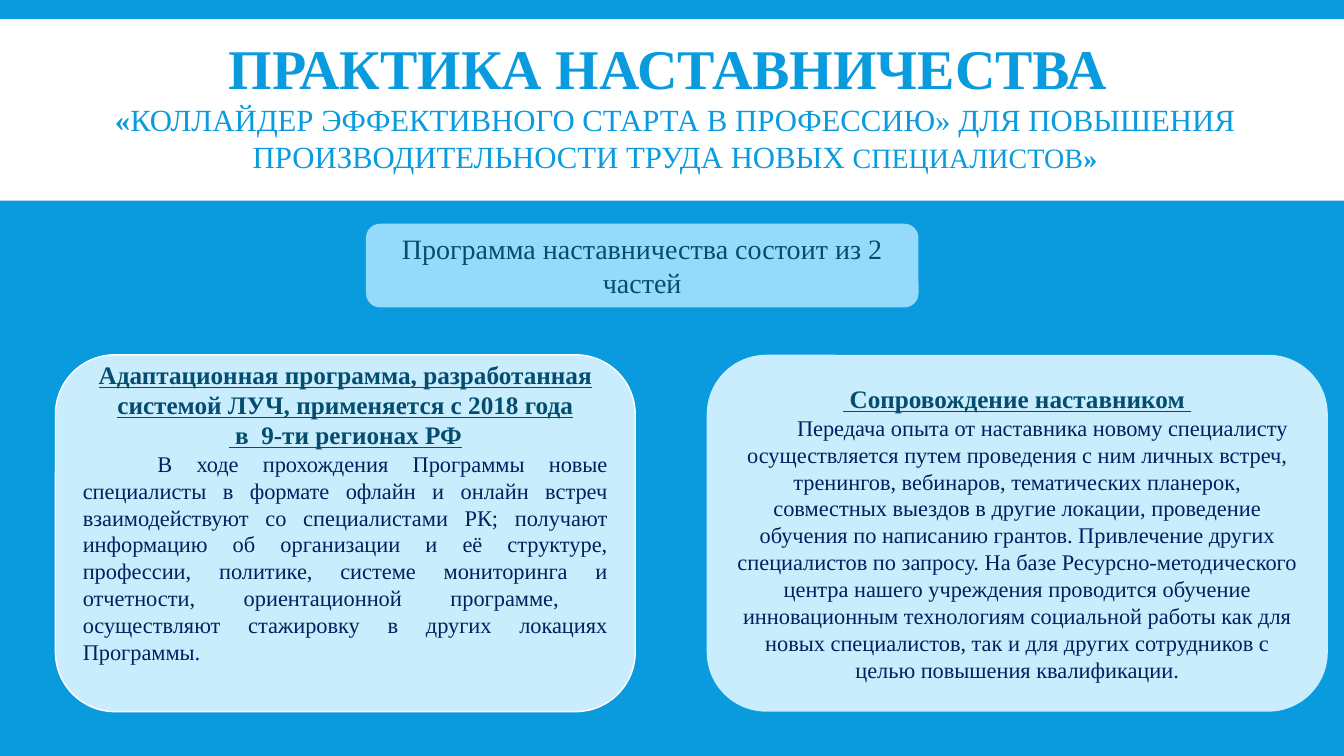
from pptx import Presentation
from pptx import util as u
from pptx.dml.color import RGBColor
from pptx.enum import shapes, text

PX = 9144  # 100 px to the inch
FONT = "Times New Roman"
BLUE, TEAL, NAVY, WHITE = "099BDD", "044D6E", "002060", "FFFFFF"
SKY, PALE = "93DAFB", "C9EDFD"

LEFT_HEAD = [
    "Адаптационная программа, разработанная системой ЛУЧ, применяется с 2018 года",
    " в  9-ти регионах РФ",
]
LEFT_BODY = (
    "В ходе прохождения Программы новые специалисты в формате офлайн и онлайн "
    "встреч взаимодействуют со специалистами РК; получают информацию об "
    "организации и её структуре, профессии, политике, системе мониторинга и "
    "отчетности, ориентационной программе,  осуществляют стажировку в других "
    "локациях Программы."
)
RIGHT_HEAD = [" Сопровождение наставником "]
RIGHT_BODY = (
    "Передача опыта от наставника новому специалисту осуществляется путем "
    "проведения с ним личных встреч, тренингов, вебинаров, тематических "
    "планерок, совместных выездов в другие локации, проведение обучения по "
    "написанию грантов. Привлечение других специалистов по запросу. На базе "
    "Ресурсно-методического центра нашего учреждения проводится обучение "
    "инновационным технологиям социальной работы как для новых специалистов, "
    "так и для других сотрудников с целью повышения квалификации."
)


def px(n):
    return u.Emu(n * PX)


def color(code):
    return RGBColor.from_string(code)


def style(run, size, code, bold=False, under=False):
    font = run.font
    font.name, font.size = FONT, u.Pt(size)
    font.bold, font.underline = bold, under
    font.color.rgb = color(code)


def block(slide, kind, box, fill, line=None):
    shape = slide.shapes.add_shape(kind, *map(px, box))
    shape.shadow.inherit = False
    shape.fill.solid()
    shape.fill.fore_color.rgb = color(fill)
    if line:
        shape.line.color.rgb = color(line)
        shape.line.width = u.Pt(1)
    else:
        shape.line.fill.background()
    frame = shape.text_frame
    frame.word_wrap = True
    frame.vertical_anchor = text.MSO_ANCHOR.MIDDLE
    return shape


def header(slide, box):
    """Place the white band and the title over it."""
    x, y, w, h = box
    title = slide.shapes.title
    band = block(slide, shapes.MSO_SHAPE.RECTANGLE, box, WHITE)
    title.element.addprevious(band.element)
    title.left, title.top = px(x + 101), px(y + 2)
    title.width, title.height = px(w - 196), px(h - 15)
    frame = title.text_frame
    frame.word_wrap = True
    frame.auto_size = text.MSO_AUTO_SIZE.NONE
    frame.vertical_anchor = text.MSO_ANCHOR.MIDDLE
    para = frame.paragraphs[0]
    para.text = "ПРАКТИКА НАСТАВНИЧЕСТВА \v«"
    para.alignment = text.PP_ALIGN.CENTER
    for run, size in zip(para.runs, (40, 22)):
        style(run, size, BLUE, bold=True)
    for words, size, bold in (
        ("КОЛЛАЙДЕР ЭФФЕКТИВНОГО СТАРТА В ПРОФЕССИЮ» ДЛЯ ПОВЫШЕНИЯ "
         "ПРОИЗВОДИТЕЛЬНОСТИ ТРУДА НОВЫХ ", 22, False),
        ("СПЕЦИАЛИСТОВ", 20, False),
        ("»", 20, True),
    ):
        run = para.add_run()
        run.text = words
        style(run, size, BLUE, bold)


def banner(slide, box, words):
    shape = block(slide, shapes.MSO_SHAPE.ROUNDED_RECTANGLE, box, SKY)
    para = shape.text_frame.paragraphs[0]
    para.text = words
    para.alignment = text.PP_ALIGN.CENTER
    style(para.runs[0], 20, TEAL)


def card(slide, box, heads, body, align, indent, line=None):
    """Place a rounded card with underlined heads over one body paragraph."""
    shape = block(slide, shapes.MSO_SHAPE.ROUNDED_RECTANGLE, box, PALE, line)
    frame = shape.text_frame
    frame.text = "\n".join(heads + [body])
    *tops, last = frame.paragraphs
    for para in tops:
        para.alignment = text.PP_ALIGN.CENTER
        style(para.runs[0], 18, TEAL, bold=True, under=True)
    last.alignment = align
    last._p.get_or_add_pPr().set("indent", str(px(indent)))
    style(last.runs[0], 16, NAVY)
    return frame


def main():
    deck = Presentation()
    deck.slide_width, deck.slide_height = px(1333), px(750)
    slide = deck.slides.add_slide(deck.slide_layouts[5])
    slide.background.fill.solid()
    slide.background.fill.fore_color.rgb = color(BLUE)

    header(slide, (0, 19, 1333, 180))
    banner(slide, (363, 222, 548, 83),
           "Программа наставничества состоит из 2 частей")
    left = card(slide, (55, 352, 575, 354), LEFT_HEAD, LEFT_BODY,
                text.PP_ALIGN.JUSTIFY, 74, WHITE)
    left.margin_top, left.margin_bottom = px(0), px(42)
    card(slide, (701, 352, 616, 354), RIGHT_HEAD, RIGHT_BODY,
         text.PP_ALIGN.CENTER, 50)
    deck.save("out.pptx")


if __name__ == "__main__":
    main()
